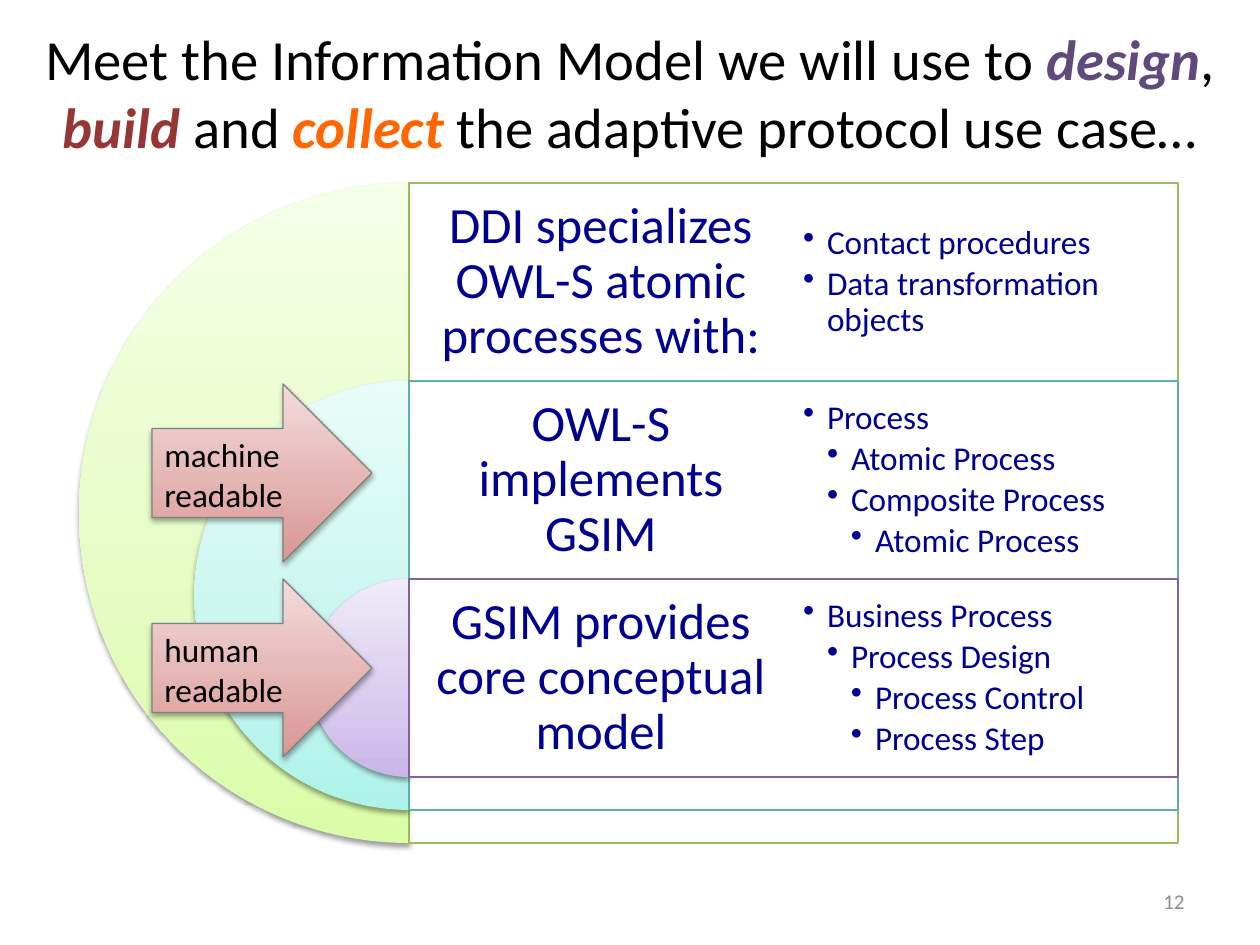
from dataclasses import dataclass

from pptx import Presentation
from pptx.dml.color import RGBColor
from pptx.enum.shapes import MSO_SHAPE
from pptx.enum.text import MSO_ANCHOR, MSO_AUTO_SIZE, PP_ALIGN
from pptx.oxml import parse_xml
from pptx.oxml.ns import nsdecls
from pptx.util import Emu, Pt

PIE, RECTANGLE, ARROW = MSO_SHAPE.PIE, MSO_SHAPE.RECTANGLE, MSO_SHAPE.RIGHT_ARROW
TOP, MIDDLE = MSO_ANCHOR.TOP, MSO_ANCHOR.MIDDLE
LEFT, CENTER, RIGHT = PP_ALIGN.LEFT, PP_ALIGN.CENTER, PP_ALIGN.RIGHT
NO_AUTOFIT = MSO_AUTO_SIZE.NONE
PX = 914400 / 126


@dataclass
class Theme:
    font: str = "Calibri"
    title_size: float = 32.4
    heading_size: int = 29
    body_size: int = 19
    number_size: int = 12
    black: str = "000000"
    white: str = "FFFFFF"
    navy: str = "000090"
    grey: str = "8C8C8C"
    outline: str = "808080"
    design: str = "604A7B"
    build: str = "953735"
    collect: str = "FF6600"
    arrow: tuple = ((0, "D99694"), (100, "F2DCDB"))


def px(*lengths):
    return [Emu(round(length * PX)) for length in lengths]


def shade(shape, stops, opacity, distance):
    gradient = "".join(
        f'<a:gs pos="{position * 1000}"><a:srgbClr val="{color}"/></a:gs>'
        for position, color in stops
    )
    properties = shape._element.spPr
    properties.append(parse_xml(
        f'<a:gradFill {nsdecls("a")} rotWithShape="1"><a:gsLst>{gradient}</a:gsLst>'
        '<a:lin ang="16200000" scaled="0"/></a:gradFill>'
    ))
    shape.line.fill.background()
    properties.append(parse_xml(
        f'<a:effectLst {nsdecls("a")}><a:outerShdw blurRad="40000" dist="{distance}" '
        'dir="5400000" rotWithShape="0"><a:srgbClr val="000000">'
        f'<a:alpha val="{opacity * 1000}"/></a:srgbClr></a:outerShdw></a:effectLst>'
    ))


theme = Theme()
deck = Presentation()
deck.slide_width, deck.slide_height = px(1260, 945)
page = deck.slides.add_slide(deck.slide_layouts[5])

title = page.shapes.title
title.left, title.top, title.width, title.height = px(30, 13, 1200, 157)
frame = title.text_frame
frame.auto_size = NO_AUTOFIT
frame.vertical_anchor = MIDDLE
para = frame.paragraphs[0]
para.alignment = CENTER
para.font.name = theme.font
para.font.size = Pt(theme.title_size)
for words, color in (
    ("Meet the Information Model we will use to ", theme.black),
    ("design", theme.design),
    (", ", theme.black),
    ("build", theme.build),
    (" and ", theme.black),
    ("collect", theme.collect),
    (" the adaptive protocol use case…", theme.black),
):
    span = para.add_run()
    span.text = words
    span.font.color.rgb = RGBColor.from_string(color)
    span.font.bold = span.font.italic = color != theme.black

number_box = page.shapes.add_textbox(*px(903, 876, 294, 50))
number_box.text_frame.vertical_anchor = MIDDLE
number_box.text_frame.word_wrap = True
para = number_box.text_frame.paragraphs[0]
para.text = "12"
para.alignment = RIGHT
para.font.name = theme.font
para.font.size = Pt(theme.number_size)
para.font.color.rgb = RGBColor.from_string(theme.grey)

AXIS, FIRST_ROW, ROW, COLUMN = 409, 183, 198, 384
INDENT = 24
layers = (
    ("DDI specializes OWL-S atomic processes with:", "9BBB59",
     ("DAFDA7", "E4FCC2", "F5FFE7"),
     ((0, "Contact procedures"), (0, "Data transformation objects"))),
    ("OWL-S implements GSIM", "5EAFA6",
     ("AEF3E9", "C6F5EE", "E8FCF9"),
     ((0, "Process"), (1, "Atomic Process"), (1, "Composite Process"),
      (2, "Atomic Process"))),
    ("GSIM provides core conceptual model", "8064A2",
     ("C9B5E8", "D8CBEE", "F0EAF9"),
     ((0, "Business Process"), (1, "Process Design"), (2, "Process Control"),
      (2, "Process Step"))),
)
for index, (heading, line_color, tints, bullets) in enumerate(layers):
    top = FIRST_ROW + index * ROW
    diameter = 660 - index * 231

    pie = page.shapes.add_shape(PIE, *px(AXIS - diameter / 2, top, diameter, diameter))
    pie.adjustments[0], pie.adjustments[1] = 54, 162
    shade(pie, zip((0, 35, 100), tints), 38, 20000)

    panel = page.shapes.add_shape(RECTANGLE, *px(AXIS, top, 2 * COLUMN + 1, diameter))
    panel.shadow.inherit = False
    panel.fill.solid()
    panel.fill.fore_color.rgb = RGBColor.from_string(theme.white)
    fill_color = panel._element.spPr.find(".//{*}solidFill/{*}srgbClr")
    fill_color.append(parse_xml(f'<a:alpha {nsdecls("a")} val="90000"/>'))
    panel.line.color.rgb = RGBColor.from_string(line_color)
    panel.line.width = Pt(0.75)

    for column, (inset, size, entries) in enumerate((
        (15, theme.heading_size, ((0, heading),)),
        (10, theme.body_size, bullets),
    )):
        box = page.shapes.add_textbox(*px(AXIS + column * COLUMN, top, COLUMN, ROW))
        frame = box.text_frame
        frame.word_wrap = True
        frame.vertical_anchor = MIDDLE
        (frame.margin_left, frame.margin_top,
         frame.margin_right, frame.margin_bottom) = px(*[inset] * 4)
        for order, (level, words) in enumerate(entries):
            para = frame.add_paragraph() if order else frame.paragraphs[0]
            para.text = words
            para.line_spacing = 0.9
            if column:
                para.level = level + 1
                para.alignment = LEFT
                para.space_after = Pt(size * 0.15)
                margin, hanging = px((level + 1) * INDENT, -INDENT)
                properties = para._p.get_or_add_pPr()
                properties.set("marL", str(margin))
                properties.set("indent", str(hanging))
                properties.append(parse_xml(f'<a:buChar {nsdecls("a")} char="•"/>'))
            else:
                para.alignment = CENTER
            para.font.name = theme.font
            para.font.size = Pt(size)
            para.font.color.rgb = RGBColor.from_string(theme.navy)

for words, top in (("human readable", 579), ("machine readable", 384)):
    arrow = page.shapes.add_shape(ARROW, *px(152, top, 220, 178))
    shade(arrow, theme.arrow, 35, 23000)
    arrow.line.color.rgb = RGBColor.from_string(theme.outline)
    arrow.line.width = Pt(0.75)
    frame = arrow.text_frame
    frame.word_wrap = True
    frame.vertical_anchor = TOP
    para = frame.paragraphs[0]
    para.text = words
    para.alignment = LEFT
    para.font.name = theme.font
    para.font.size = Pt(theme.body_size)
    para.font.color.rgb = RGBColor.from_string(theme.black)

deck.save("out.pptx")
